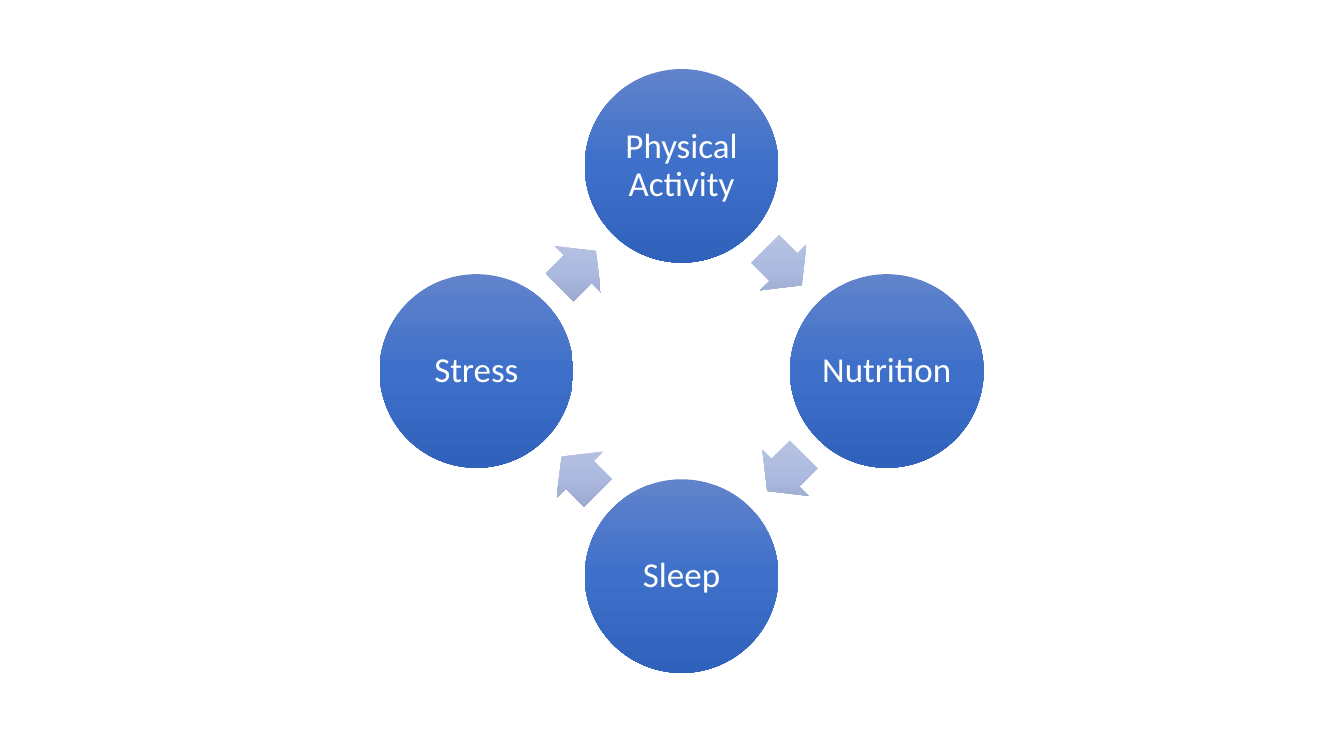
from lxml.etree import SubElement
from pptx import Presentation
from pptx.dml.color import RGBColor
from pptx.enum.shapes import MSO_SHAPE
from pptx.enum.text import MSO_ANCHOR, PP_ALIGN
from pptx.oxml.ns import qn
from pptx.util import Inches, Pt

CENTER_X, CENTER_Y = 6.76, 3.68
RING_RADIUS = 2.035
CIRCLE_SIZE = 1.92
ARROW_WIDTH, ARROW_HEIGHT = 0.51, 0.65
CIRCLE_COLORS = ["6183CB", "3E70CA", "3062BB"]
ARROW_COLORS = ["BBC5E3", "AEBBE0", "98A4CB"]
TOPICS = ["Physical Activity", "Nutrition", "Sleep", "Stress"]


def add_gradient_shape(kind, x, y, width, height, colors):
    shape = page.shapes.add_shape(
        kind, Inches(x - width / 2), Inches(y - height / 2), Inches(width), Inches(height)
    )
    shape.shadow.inherit = False
    shape.line.fill.background()
    shape.fill.gradient()
    gradient = shape.element.spPr.find(qn("a:gradFill"))
    gradient.clear()
    gradient.set("rotWithShape", "0")
    stops = SubElement(gradient, qn("a:gsLst"))
    for position, color in zip((0, 50000, 100000), colors):
        stop = SubElement(stops, qn("a:gs"), pos=str(position))
        SubElement(stop, qn("a:srgbClr"), val=color)
    SubElement(gradient, qn("a:lin"), ang="5400000", scaled="0")
    return shape


def write_text(box, text, size=25, font="Calibri", color="FFFFFF", inset=0.03):
    frame = box.text_frame
    frame.word_wrap = True
    frame.vertical_anchor = MSO_ANCHOR.MIDDLE
    frame.margin_left = frame.margin_right = Inches(inset)
    frame.margin_top = frame.margin_bottom = Inches(inset)
    para = frame.paragraphs[0]
    para.alignment = PP_ALIGN.CENTER
    para.line_spacing = 0.9
    span = para.add_run()
    span.text = text
    span.font.size = Pt(size)
    span.font.name = font
    span.font.color.rgb = RGBColor.from_string(color)


deck = Presentation()
deck.slide_width = Inches(13.33)
deck.slide_height = Inches(7.5)
page = deck.slides.add_slide(deck.slide_layouts[6])

circle_x, circle_y = 0, -RING_RADIUS
arrow_x, arrow_y = 1.01, -1.03
for index, topic in enumerate(TOPICS):
    circle = add_gradient_shape(
        MSO_SHAPE.OVAL, CENTER_X + circle_x, CENTER_Y + circle_y,
        CIRCLE_SIZE, CIRCLE_SIZE, CIRCLE_COLORS,
    )
    write_text(circle, topic)

    arrow = add_gradient_shape(
        MSO_SHAPE.RIGHT_ARROW, CENTER_X + arrow_x, CENTER_Y + arrow_y,
        ARROW_WIDTH, ARROW_HEIGHT, ARROW_COLORS,
    )
    arrow.adjustments[0] = 0.6
    arrow.adjustments[1] = 0.5
    arrow.rotation = 45 + 90 * index

    circle_x, circle_y = -circle_y, circle_x
    arrow_x, arrow_y = -arrow_y, arrow_x

deck.save("out.pptx")
